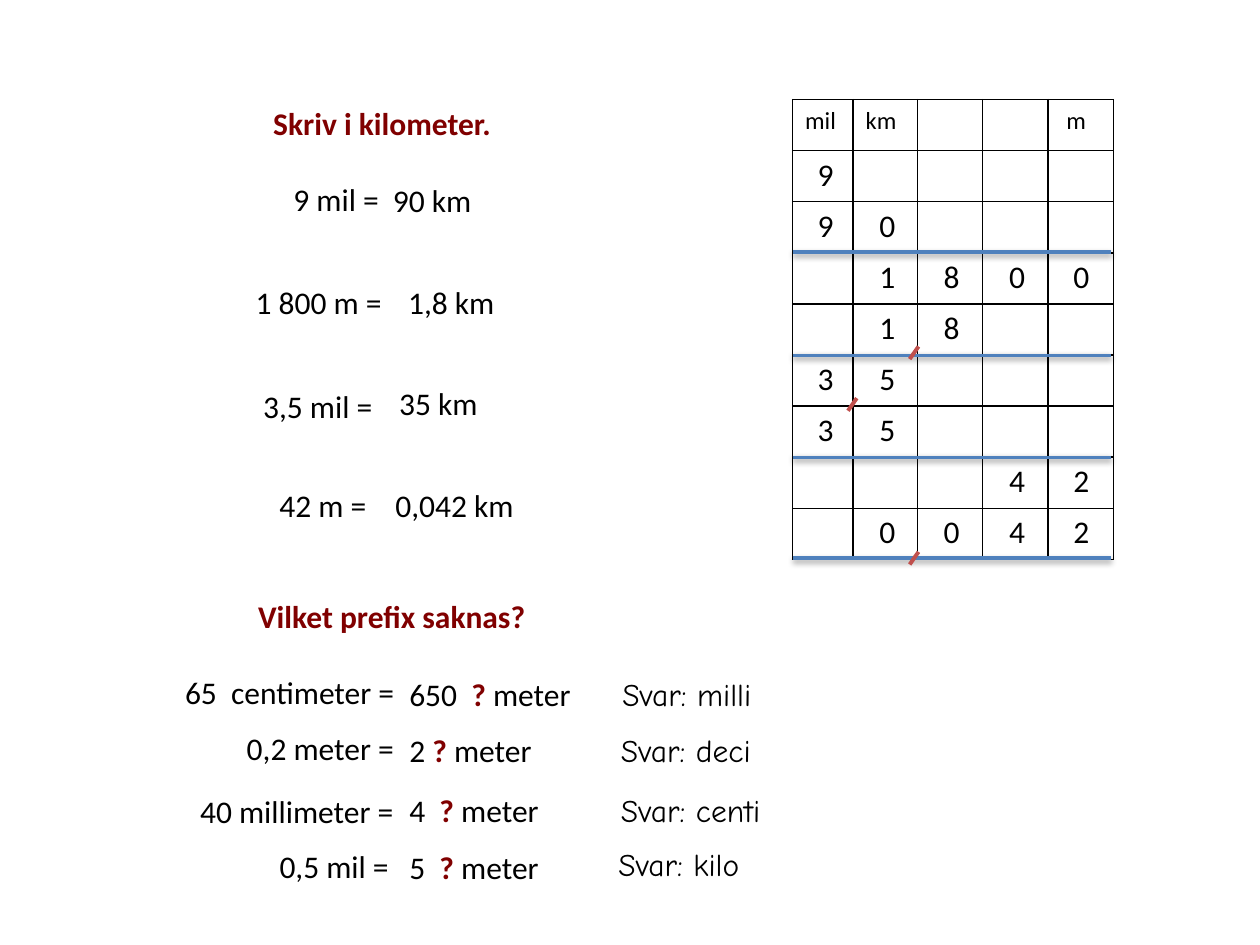
from lxml import etree
from pptx import Presentation
from pptx.dml.color import RGBColor
from pptx.enum.shapes import MSO_CONNECTOR
from pptx.oxml import parse_xml
from pptx.util import Inches, Pt

STRAIGHT = MSO_CONNECTOR.STRAIGHT
BLACK = RGBColor(0, 0, 0)
WHITE = RGBColor(255, 255, 255)
MAROON = RGBColor(0x80, 0, 0)
BLUE = RGBColor(0x4F, 0x81, 0xBD)
RED = RGBColor(0xC0, 0x50, 0x4D)
DRAWING = "http://schemas.openxmlformats.org/drawingml/2006/main"
BORDER = (
    f'<a:{{side}} xmlns:a="{DRAWING}" w="12700"><a:solidFill>'
    '<a:srgbClr val="000000"/></a:solidFill></a:{side}>'
)
SHADOW = (
    f'<a:effectLst xmlns:a="{DRAWING}"><a:outerShdw blurRad="40000" dist="20000" '
    'dir="5400000" rotWithShape="0"><a:srgbClr val="000000">'
    '<a:alpha val="38000"/></a:srgbClr></a:outerShdw></a:effectLst>'
)

TABLE_LEFT, TABLE_TOP, TABLE_RIGHT = 6.29, 0.79, 8.82
ROW_HEIGHT = 0.405
COLUMN_WIDTHS = (0.48, 0.51, 0.52, 0.52, 0.52)
UNITS = ("mil", "km", "", "", " m")
DIGIT_LEFTS = (6.39, 6.88, 7.39, 7.91, 8.42)
DIGIT_ROWS = ("9", "90", " 1800", " 18", "35", "35", "   42", " 0042")
RULE_TOPS = (2, 2.82, 3.63, 4.43)
COMMAS = ((6.8, 3.16), (7.29, 2.75), (7.29, 4.38))
ANSWER_LEFT = 3.15

HEADINGS = (
    ("Skriv i kilometer.", 2.07, 0.78, 1.97),
    ("Vilket prefix saknas?", 1.95, 4.69, 2.75),
)
CONVERSIONS = (
    ("9 mil =", 2.23, 1.38, 0.89),
    ("90 km", 3.02, 1.39, 0.83),
    ("1 800 m =", 1.93, 2.2, 1.21),
    ("1,8 km", 3.14, 2.2, 0.89),
    ("3,5 mil =", 1.99, 3.02, 1.08),
    ("35 km", 3.07, 3, 0.83),
    ("42 m =", 2.12, 3.81, 0.9),
    ("0,042 km", 3.04, 3.81, 1.15),
    ("65  centimeter =", 1.37, 5.29, 1.91),
    ("0,2 meter =", 1.86, 5.74, 1.39),
    ("40 millimeter =", 1.49, 6.24, 1.76),
    ("0,5 mil =", 2.12, 6.67, 1.08),
)
PREFIX_QUESTIONS = (
    ("650  ? meter", 5.31, 1.5),
    ("2 ? meter", 5.75, 1.19),
    ("4  ? meter", 6.23, 1.24),
    ("5  ? meter", 6.68, 1.24),
)
PREFIX_ANSWERS = (
    ("Svar: milli", 4.84, 5.31),
    ("Svar: deci", 4.83, 5.75),
    ("Svar: centi", 4.83, 6.23),
    ("Svar: kilo", 4.81, 6.66),
)


def write_run(paragraph, text, size=18, font="Calibri", color=BLACK, bold=False):
    """Append formatted text to a paragraph."""
    run = paragraph.add_run()
    run.text = text
    run.font.size = Pt(size)
    run.font.name = font
    run.font.color.rgb = color
    run.font.bold = bold


class Worksheet:
    """Draw the elements of a unit conversion worksheet on one slide."""

    def __init__(self, slide):
        self.slide = slide

    def text(self, text, left, top, width, wrap=False, **style):
        """Add a line of text with its question mark highlighted."""
        box = self.slide.shapes.add_textbox(
            Inches(left), Inches(top), Inches(width), Inches(0.4)
        )
        box.text_frame.word_wrap = wrap
        paragraph = box.text_frame.paragraphs[0]
        before, mark, after = text.partition("?")
        write_run(paragraph, before, **style)
        if mark:
            write_run(paragraph, mark, color=MAROON, bold=True)
            write_run(paragraph, after, **style)

    def line(self, start, end, color, width, shadow=False):
        """Add a straight line, with or without a soft shadow."""
        points = [Inches(value) for value in (*start, *end)]
        connector = self.slide.shapes.add_connector(STRAIGHT, *points)
        connector.line.color.rgb = color
        connector.line.width = Pt(width)
        properties = connector._element.spPr
        if shadow:
            properties.append(parse_xml(SHADOW))
        else:
            etree.SubElement(properties, f"{{{DRAWING}}}effectLst")

    def table(self):
        """Add the bordered place value table with its unit row."""
        row_count = len(DIGIT_ROWS) + 1
        table = self.slide.shapes.add_table(
            row_count, len(UNITS), Inches(TABLE_LEFT), Inches(TABLE_TOP),
            Inches(sum(COLUMN_WIDTHS)), Inches(row_count * ROW_HEIGHT),
        ).table
        table.first_row = False
        table.horz_banding = False
        for column, width in zip(table.columns, COLUMN_WIDTHS):
            column.width = Inches(width)
        for row in table.rows:
            row.height = Inches(ROW_HEIGHT)
        for cell in table.iter_cells():
            properties = cell._tc.get_or_add_tcPr()
            for side in ("lnL", "lnR", "lnT", "lnB"):
                properties.append(parse_xml(BORDER.format(side=side)))
            cell.fill.solid()
            cell.fill.fore_color.rgb = WHITE
        for column, unit in enumerate(UNITS):
            if unit:
                paragraph = table.cell(0, column).text_frame.paragraphs[0]
                write_run(paragraph, unit, size=14)

    def digits(self):
        """Place each digit in its column of the table."""
        for row, digits in enumerate(DIGIT_ROWS):
            top = 1.18 + row * ROW_HEIGHT
            for left, digit in zip(DIGIT_LEFTS, digits):
                if digit != " ":
                    self.text(digit, left, top, 0.29, wrap=True)


def main():
    """Build and save the worksheet."""
    presentation = Presentation()
    presentation.slide_width = Inches(10)
    presentation.slide_height = Inches(7.5)
    worksheet = Worksheet(presentation.slides.add_slide(presentation.slide_layouts[6]))

    worksheet.table()
    for top in RULE_TOPS:
        worksheet.line((TABLE_LEFT, top), (TABLE_RIGHT, top), BLUE, 2, shadow=True)
    worksheet.digits()
    for left, top in COMMAS:
        worksheet.line((left, top), (left - 0.07, top + 0.1), RED, 2.25)
    for heading in HEADINGS:
        worksheet.text(*heading, wrap=heading[3] > 2, color=MAROON, bold=True)
    for conversion in CONVERSIONS:
        worksheet.text(*conversion)
    for question, top, width in PREFIX_QUESTIONS:
        worksheet.text(question, ANSWER_LEFT, top, width)
    for answer, left, top in PREFIX_ANSWERS:
        worksheet.text(answer, left, top, 1.45, wrap=True, font="Comic Neue")

    presentation.save("out.pptx")


if __name__ == "__main__":
    main()
